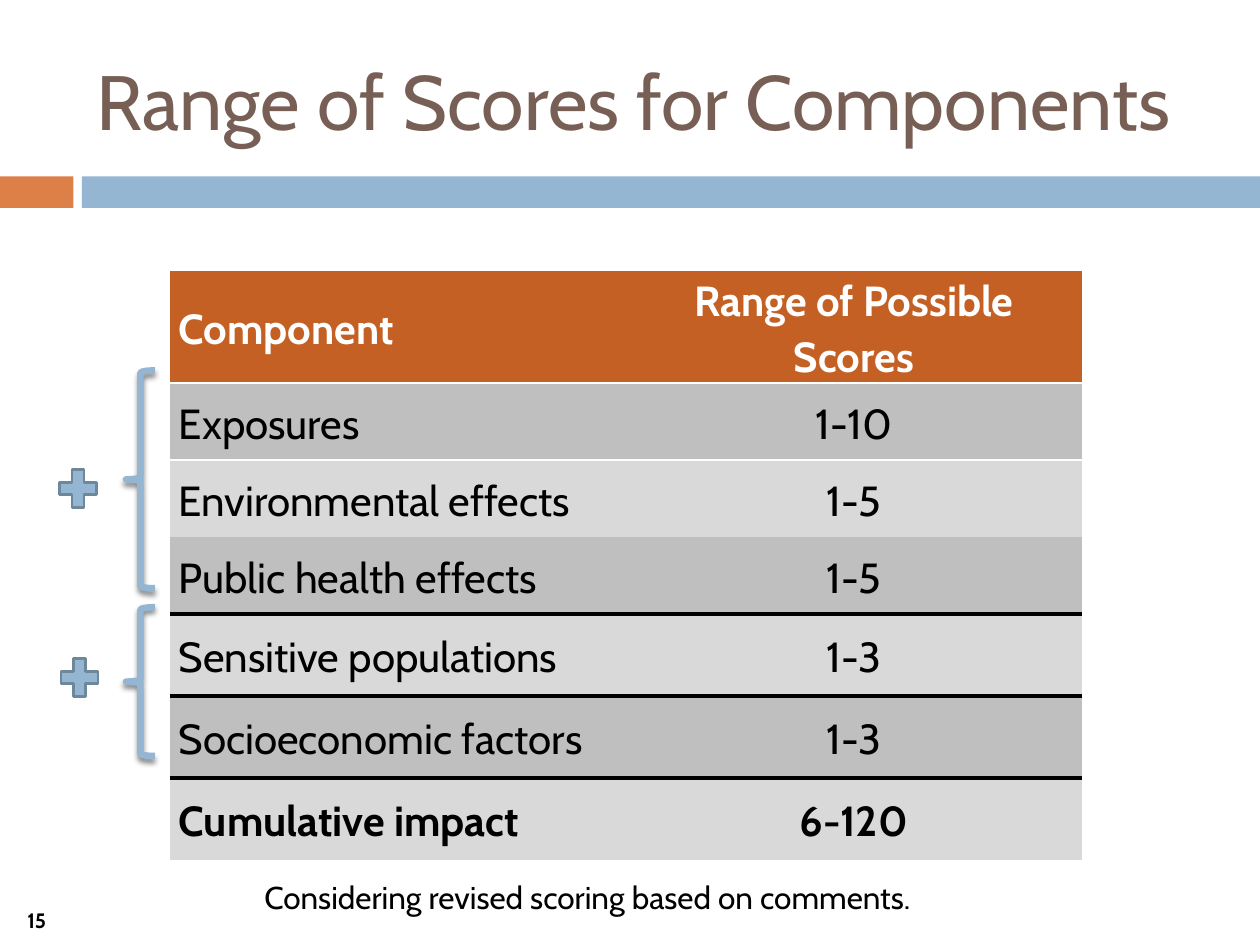
import pptx
import pptx.dml.color
import pptx.enum.shapes
import pptx.enum.text
import pptx.oxml
import pptx.oxml.ns
import pptx.util

Pt = pptx.util.Pt
RGBColor = pptx.dml.color.RGBColor
SHAPE = pptx.enum.shapes.MSO_SHAPE
ALIGN = pptx.enum.text.PP_ALIGN
ANCHOR = pptx.enum.text.MSO_ANCHOR

FONT = "Cabin"
BROWN = RGBColor(0x77, 0x5F, 0x55)
ORANGE = RGBColor(0xDD, 0x80, 0x47)
RUST = RGBColor(0xC4, 0x60, 0x24)
BLUE = RGBColor(0x94, 0xB6, 0xD2)
SLATE = RGBColor(0x6D, 0x87, 0x9B)
DARK_GREY = RGBColor(0xBF, 0xBF, 0xBF)
LIGHT_GREY = RGBColor(0xD9, 0xD9, 0xD9)
WHITE = RGBColor(0xFF, 0xFF, 0xFF)
BLACK = RGBColor(0, 0, 0)
NO_TABLE_STYLE = "{2D5ABB26-0587-4C30-8999-92F81FD0307C}"


def write(frame, text, size=24, color=BLACK, bold=False, align=ALIGN.LEFT):
    """Put one formatted paragraph in a text frame and return it."""
    frame.word_wrap = True
    para = frame.paragraphs[0]
    para.alignment = align
    span = para.add_run()
    span.text = text
    span.font.name = FONT
    span.font.size = Pt(size)
    span.font.bold = bold
    span.font.color.rgb = color
    return para


def add_border(cell, side, color, width):
    """Draw the top (lnT) or bottom (lnB) border of a table cell."""
    border = pptx.oxml.parse_xml(
        f'<a:{side} {pptx.oxml.ns.nsdecls("a")} w="{Pt(width)}"><a:solidFill>'
        f'<a:srgbClr val="{color}"/></a:solidFill></a:{side}>')
    cell._tc.get_or_add_tcPr().insert(0, border)


deck = pptx.Presentation()
deck.slide_width, deck.slide_height = Pt(720), Pt(540)
page = deck.slides.add_slide(deck.slide_layouts[5])

# Band under the title
for left, width, color in [(0, 42, ORANGE), (46.8, 673.2, BLUE)]:
    band = page.shapes.add_shape(SHAPE.RECTANGLE, Pt(left), Pt(100.8), Pt(width), Pt(18))
    band.shadow.inherit = False
    band.fill.solid()
    band.fill.fore_color.rgb = color
    band.line.fill.background()

# Title
title = page.shapes.title
title.left, title.top, title.width, title.height = Pt(48), Pt(18), Pt(642), Pt(78)
title.text_frame.auto_size = pptx.enum.text.MSO_AUTO_SIZE.NONE
title.text_frame.vertical_anchor = ANCHOR.MIDDLE
write(title.text_frame, "Range of Scores for Components", size=44, color=BROWN)

# Score table
rows = [
    ("Component", "Range of Possible Scores"),
    ("Exposures", "1-10"),
    ("Environmental effects", "1-5"),
    ("Public health effects", "1-5"),
    ("Sensitive populations", "1-3"),
    ("Socioeconomic factors", "1-3"),
    ("Cumulative impact", "6-120"),
]
heights = [52.5, 44, 44, 44, 46.8, 46.8, 46.8]
rules_below = {0: (WHITE, 1.5), 3: (BLACK, 2.25), 5: (BLACK, 2.25)}
last = len(rows) - 1
frame = page.shapes.add_table(len(rows), 2, Pt(97.2), Pt(154.8), Pt(521), Pt(sum(heights)))
table = frame.table
table._tbl.tblPr.find(pptx.oxml.ns.qn("a:tableStyleId")).text = NO_TABLE_STYLE
for column in table.columns:
    column.width = Pt(260.5)
for r, texts in enumerate(rows):
    table.rows[r].height = Pt(heights[r])
    for c, text in enumerate(texts):
        cell = table.cell(r, c)
        cell.vertical_anchor = ANCHOR.MIDDLE
        cell.margin_left = cell.margin_right = Pt(5)
        cell.margin_top = cell.margin_bottom = 0
        para = write(cell.text_frame, text, color=BLACK if r else WHITE,
                     bold=r in (0, last), align=ALIGN.CENTER if c else ALIGN.LEFT)
        para.line_spacing = 1.1
        para.space_before = para.space_after = Pt(3)
        if r in rules_below:
            add_border(cell, "lnB", *rules_below[r])
        if r - 1 in rules_below:
            add_border(cell, "lnT", *rules_below[r - 1])
        cell.fill.solid()
        cell.fill.fore_color.rgb = RUST if r == 0 else DARK_GREY if r % 2 else LIGHT_GREY

# Braces with plus signs for the groups that are added up
for brace_top, brace_height, plus_left, plus_top in [
        (211.7, 124.5, 30.2, 264.2), (347, 85, 31, 372.2)]:
    brace = page.shapes.add_shape(
        SHAPE.LEFT_BRACE, Pt(72), Pt(brace_top), Pt(16.5), Pt(brace_height))
    brace.fill.background()
    brace.line.color.rgb = BLUE
    brace.line.width = Pt(3.75)
    brace.shadow.inherit = False
    effects = brace._element.spPr.find(pptx.oxml.ns.qn("a:effectLst"))
    effects.append(pptx.oxml.parse_xml(
        f'<a:outerShdw {pptx.oxml.ns.nsdecls("a")} blurRad="{Pt(3)}" dist="{Pt(2.4)}" '
        'dir="5400000" rotWithShape="0"><a:srgbClr val="000000">'
        '<a:alpha val="45000"/></a:srgbClr></a:outerShdw>'))

    plus = page.shapes.add_shape(
        SHAPE.MATH_PLUS, Pt(plus_left), Pt(plus_top), Pt(28.8), Pt(30))
    plus.shadow.inherit = False
    plus.fill.solid()
    plus.fill.fore_color.rgb = BLUE
    plus.line.color.rgb = SLATE
    plus.line.width = Pt(1.5)

# Page number and note
number = page.shapes.add_textbox(Pt(0), Pt(516.2), Pt(42), Pt(19.4))
number.text_frame.vertical_anchor = ANCHOR.MIDDLE
write(number.text_frame, "15", size=11.9, bold=True, align=ALIGN.CENTER)
note = page.shapes.add_textbox(Pt(144), Pt(498.2), Pt(396), Pt(30))
write(note.text_frame, "Considering revised scoring based on comments.", size=18)

deck.save("out.pptx")
